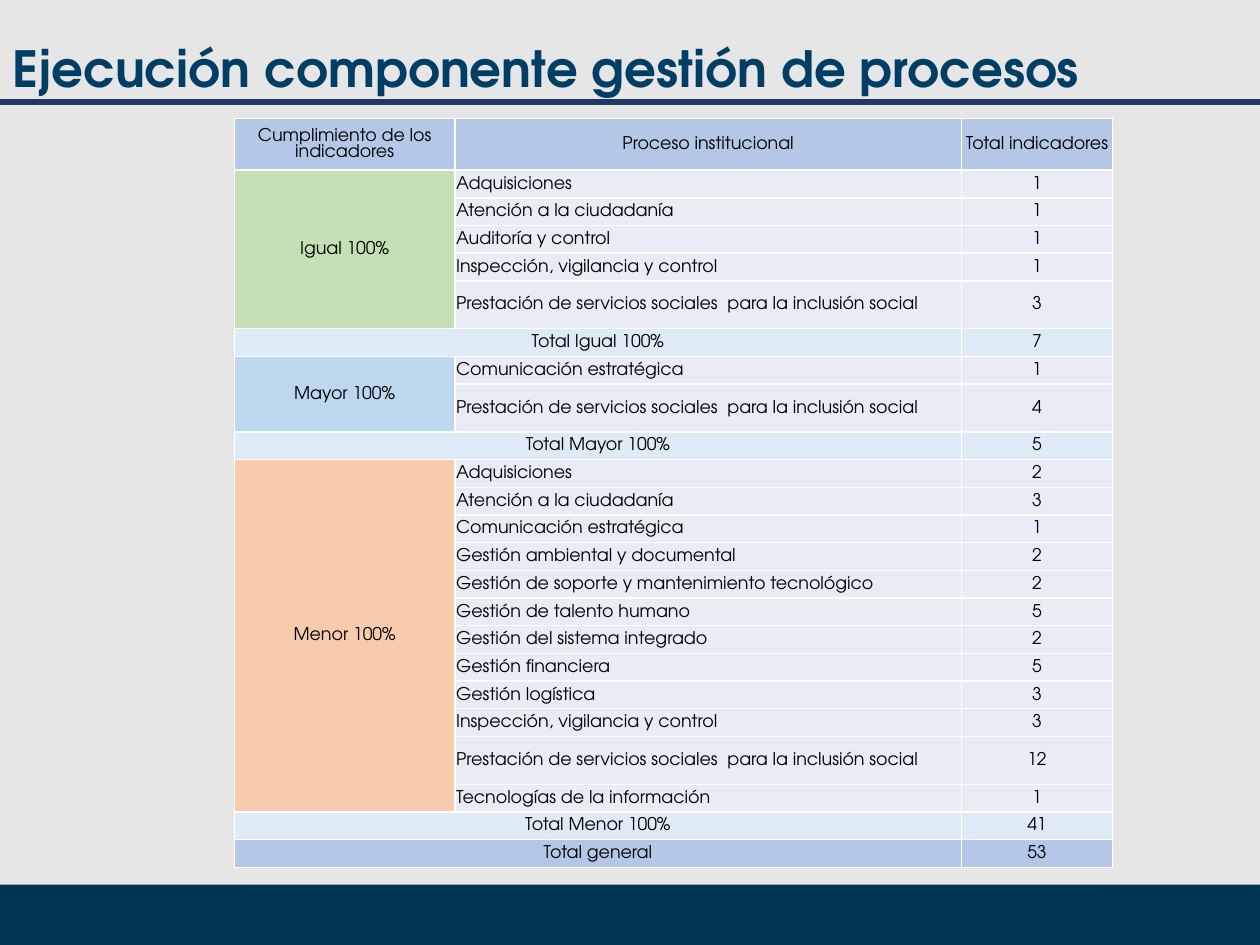
from dataclasses import dataclass

from lxml import etree
from pptx import Presentation
from pptx.dml.color import RGBColor
from pptx.enum.shapes import MSO_CONNECTOR, MSO_SHAPE
from pptx.enum.text import MSO_ANCHOR, MSO_AUTO_SIZE, PP_ALIGN
from pptx.oxml.ns import qn
from pptx.util import Inches, Pt

STRAIGHT = MSO_CONNECTOR.STRAIGHT
RECTANGLE = MSO_SHAPE.RECTANGLE
MIDDLE = MSO_ANCHOR.MIDDLE
NO_FIT = MSO_AUTO_SIZE.NONE
LEFT, CENTER = PP_ALIGN.LEFT, PP_ALIGN.CENTER

COLUMNS, ROWS = 100, 75


@dataclass(frozen=True)
class Theme:
    """Colours and type sizes of the deck."""
    font: str = "TeX Gyre Adventor"
    title_size: float = 28.5
    table_size: float = 10
    table_leading: float = 9
    rule_width: float = 3
    border_width: float = 1
    background: str = "E7E6E6"
    footer: str = "003454"
    rule: str = "203864"
    title: str = "003E65"
    text: str = "000000"
    border: str = "FFFFFF"
    header: str = "B4C7E7"
    subtotal: str = "DEEBF7"
    body: str = "E9EBF5"
    equal: str = "C5E0B4"
    greater: str = "BDD7EE"
    less: str = "F8CBAD"


THEME = Theme()
SERVICES = "Prestación de servicios sociales  para la inclusión social"
HEADINGS = ("Cumplimiento de los indicadores", "Proceso institucional", "Total indicadores")
GROUPS = [
    ("Igual 100%", THEME.equal, [
        ("Adquisiciones", 1),
        ("Atención a la ciudadanía", 1),
        ("Auditoría y control", 1),
        ("Inspección, vigilancia y control", 1),
        (SERVICES, 3),
    ]),
    ("Mayor 100%", THEME.greater, [
        ("Comunicación estratégica", 1),
        (SERVICES, 4),
    ]),
    ("Menor 100%", THEME.less, [
        ("Adquisiciones", 2),
        ("Atención a la ciudadanía", 3),
        ("Comunicación estratégica", 1),
        ("Gestión ambiental y documental", 2),
        ("Gestión de soporte y mantenimiento tecnológico", 2),
        ("Gestión de talento humano", 5),
        ("Gestión del sistema integrado", 2),
        ("Gestión financiera", 5),
        ("Gestión logística", 3),
        ("Inspección, vigilancia y control", 3),
        (SERVICES, 12),
        ("Tecnologías de la información", 1),
    ]),
]
COLUMN_WIDTHS = (17.5, 40.2, 12)
HEADER_HEIGHT, ROW_HEIGHT, TALL_HEIGHT = 4.1, 2.2, 3.8


def apply(target, formats):
    """Set each named attribute of the target."""
    for name, value in formats.items():
        setattr(target, name, value)


def rgb(color):
    """Turn a hex string into a colour."""
    return RGBColor.from_string(color)


class SlideBuilder:
    """Hold the theme and the current slide, and draw on its grid."""

    def __init__(self, deck, theme):
        """Open a title-only page with the theme's background."""
        self.theme = theme
        self.cell_width = deck.slide_width / COLUMNS
        self.cell_height = deck.slide_height / ROWS
        self.page = deck.slides.add_slide(deck.slide_layouts[5])
        self.paint(self.page.background.fill, theme.background)

    def across(self, columns):
        """Give the length of a number of grid columns."""
        return round(columns * self.cell_width)

    def down(self, rows):
        """Give the length of a number of grid rows."""
        return round(rows * self.cell_height)

    def paint(self, fill, color):
        """Fill with one solid colour."""
        fill.solid()
        fill.fore_color.rgb = rgb(color)

    def add_text(self, frame, text, size, color, align, bold=False):
        """Put one formatted paragraph in a text frame."""
        para = frame.paragraphs[0]
        para.alignment = align
        span = para.add_run()
        span.text = text
        apply(span.font, {"name": self.theme.font, "size": Pt(size), "bold": bold})
        span.font.color.rgb = rgb(color)
        return para

    def title(self, text, left, top, width, height):
        """Place and fill the title placeholder."""
        box = self.page.shapes.title
        apply(box, {"left": self.across(left), "top": self.down(top),
                    "width": self.across(width), "height": self.down(height)})
        apply(box.text_frame, {"vertical_anchor": MIDDLE, "word_wrap": True,
                               "auto_size": NO_FIT})
        self.add_text(box.text_frame, text, self.theme.title_size, self.theme.title, LEFT, True)

    def band(self, top, height, color):
        """Draw a full-width band."""
        box = self.page.shapes.add_shape(
            RECTANGLE, 0, self.down(top), self.across(COLUMNS), self.down(height))
        box.shadow.inherit = False
        self.paint(box.fill, color)
        box.line.fill.background()

    def rule(self, top, color):
        """Draw a full-width line."""
        line = self.page.shapes.add_connector(
            STRAIGHT, 0, self.down(top), self.across(COLUMNS), self.down(top))
        line.line.width = Pt(self.theme.rule_width)
        line.line.color.rgb = rgb(color)
        etree.SubElement(line._element.spPr, qn("a:effectLst"))

    def table(self, left, top, widths, heights):
        """Add an unbanded table with bordered cells."""
        table = self.page.shapes.add_table(
            len(heights), len(widths), self.across(left), self.down(top),
            self.across(sum(widths)), self.down(sum(heights))).table
        apply(table, {"first_row": False, "horz_banding": False})
        for column, width in zip(table.columns, widths):
            column.width = self.across(width)
        for row, height in zip(table.rows, heights):
            row.height = self.down(height)
        for cell in table.iter_cells():
            self.border(cell)
            apply(cell, {"margin_left": Inches(0.01), "margin_right": Inches(0.01),
                         "margin_top": Inches(0.01), "margin_bottom": 0,
                         "vertical_anchor": MIDDLE})
        return table

    def border(self, cell):
        """Outline all four sides of a cell."""
        properties = cell._tc.get_or_add_tcPr()
        for side in ("lnL", "lnR", "lnT", "lnB"):
            line = etree.SubElement(properties, qn(f"a:{side}"),
                                    w=str(Pt(self.theme.border_width)))
            fill = etree.SubElement(line, qn("a:solidFill"))
            etree.SubElement(fill, qn("a:srgbClr"), val=self.theme.border)

    def cell(self, cell, text, color, align=CENTER, merge_to=None):
        """Fill one cell, merged up to another if given."""
        if merge_to is not None:
            cell.merge(merge_to)
        self.paint(cell.fill, color)
        para = self.add_text(cell.text_frame, text, self.theme.table_size, self.theme.text, align)
        para.line_spacing = Pt(self.theme.table_leading)

    def total(self, table, row, text, value, color):
        """Fill a total row whose label spans two columns."""
        self.cell(table.cell(row, 0), text, color, merge_to=table.cell(row, 1))
        self.cell(table.cell(row, 2), str(value), color)

    def indicators(self, left, top):
        """Build the indicator table from its groups."""
        heights = [HEADER_HEIGHT]
        for _, _, processes in GROUPS:
            heights += [TALL_HEIGHT if name == SERVICES else ROW_HEIGHT for name, _ in processes]
            heights.append(ROW_HEIGHT)
        table = self.table(left, top, COLUMN_WIDTHS, heights + [ROW_HEIGHT])
        for column, heading in enumerate(HEADINGS):
            self.cell(table.cell(0, column), heading, self.theme.header)
        row = grand_total = 0
        for label, color, processes in GROUPS:
            self.cell(table.cell(row + 1, 0), label, color,
                      merge_to=table.cell(row + len(processes), 0))
            for row, (name, value) in enumerate(processes, row + 1):
                self.cell(table.cell(row, 1), name, self.theme.body, LEFT)
                self.cell(table.cell(row, 2), str(value), self.theme.body)
            row += 1
            subtotal = sum(value for _, value in processes)
            grand_total += subtotal
            self.total(table, row, f"Total {label}", subtotal, self.theme.subtotal)
        self.total(table, row + 1, "Total general", grand_total, self.theme.header)


def main():
    """Build and save the deck."""
    deck = Presentation()
    apply(deck, {"slide_width": Inches(10), "slide_height": Inches(7.5)})
    slide = SlideBuilder(deck, THEME)
    slide.band(70.2, 4.8, THEME.footer)
    slide.rule(8.1, THEME.rule)
    slide.title("Ejecución componente gestión de procesos", 0, 2.8, 88.2, 5.1)
    slide.indicators(18.6, 9.4)
    deck.save("out.pptx")


if __name__ == "__main__":
    main()
